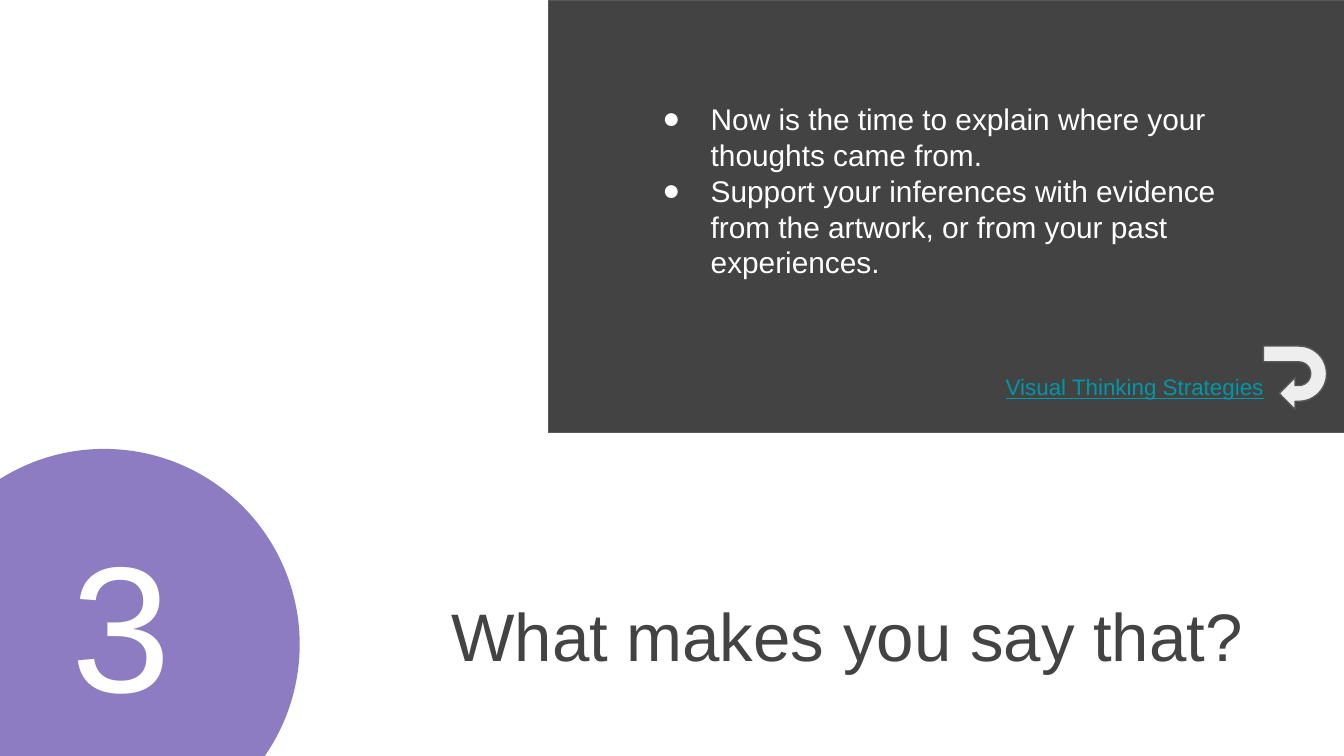
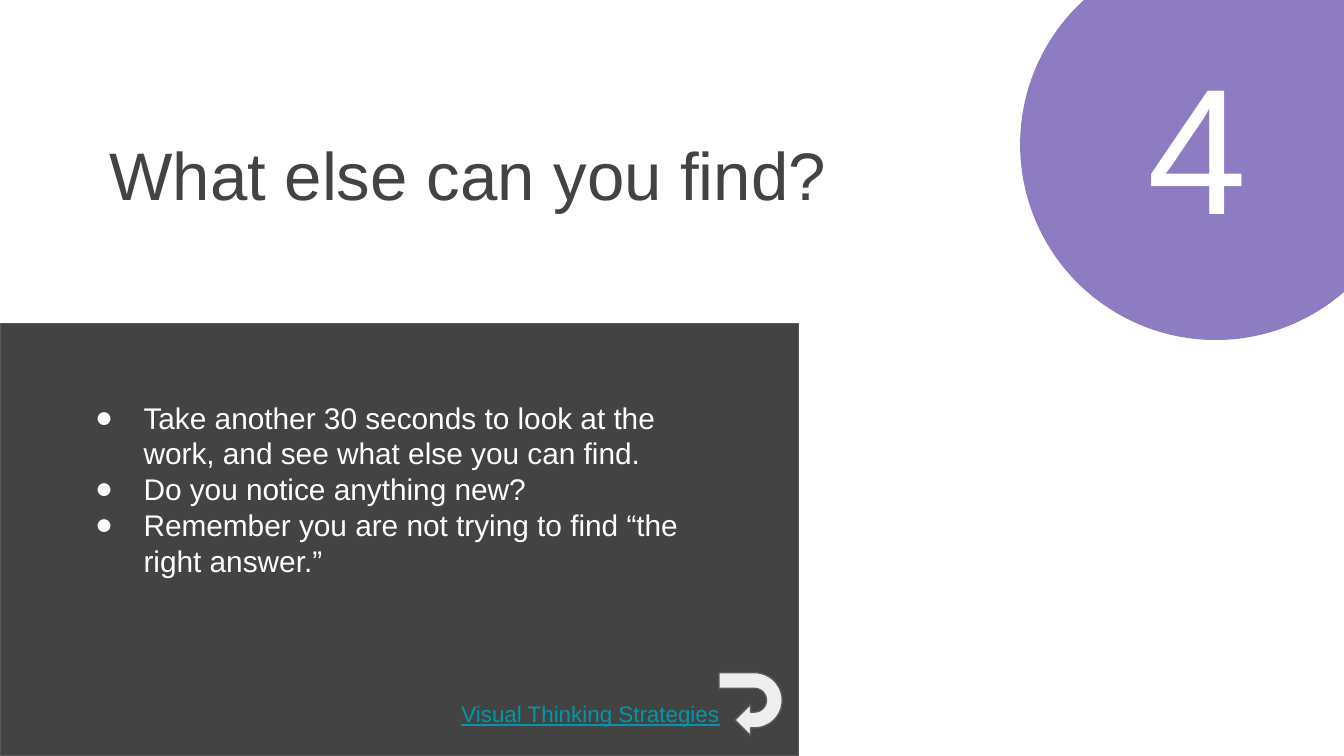
from lxml import etree
from pptx import Presentation
from pptx.dml.color import RGBColor
from pptx.enum.shapes import MSO_SHAPE
from pptx.oxml.ns import qn
from pptx.util import Pt

OVAL = MSO_SHAPE.OVAL
RECTANGLE = MSO_SHAPE.RECTANGLE
U_TURN = MSO_SHAPE.U_TURN_ARROW

PX = 4572  # 200 px to the inch
FONT = "Arial"
COLORS = {
    "purple": "8E7CC3",
    "dark": "434343",
    "outline": "595959",
    "white": "FFFFFF",
    "arrow": "EEEEEE",
    "link": "0097A7",
}

# Positions are (left, top) in px
STEPS = [
    {
        "number": "3",
        "title": "What makes you say that?",
        "bullets": [
            "Now is the time to explain where your thoughts came from.",
            "Support your inferences with evidence from the artwork, "
            "or from your past experiences.",
        ],
        "circle_at": (-136, 668),
        "panel_at": (816, 0),
        "bullets_at": (938, 130),
        "title_at": (652, 865),
        "number_at": (87, 744),
        "link_at": (1477, 536),
    },
    {
        "number": "4",
        "title": "What else can you find?",
        "bullets": [
            "Take another 30 seconds to look at the work, "
            "and see what else you can find.",
            "Do you notice anything new?",
            "Remember you are not trying to find “the right answer.”",
        ],
        "circle_at": (1518, -76),
        "panel_at": (0, 481),
        "bullets_at": (94, 574),
        "title_at": (143, 178),
        "number_at": (1688, 33),
        "link_at": (667, 1022),
    },
]


def rgb(name):
    return RGBColor.from_string(COLORS[name])


def px(*lengths):
    return [length * PX for length in lengths]


class Deck:
    def __init__(self, width, height):
        self.presentation = Presentation()
        self.presentation.slide_width, self.presentation.slide_height = px(width, height)
        self.slide = None

    def new_slide(self):
        self.slide = self.presentation.slides.add_slide(self.presentation.slide_layouts[6])

    def shape(self, kind, position, size, fill, line=None, rotation=0):
        shape = self.slide.shapes.add_shape(kind, *px(*position, *size))
        shape.shadow.inherit = False
        shape.rotation = rotation
        shape.fill.solid()
        shape.fill.fore_color.rgb = rgb(fill)
        if line:
            shape.line.color.rgb = rgb(line)
            shape.line.width = Pt(0.75)
        else:
            shape.line.fill.background()

    def text(self, paragraphs, position, size, points, color="white",
             bullets=False, underline=None):
        box = self.slide.shapes.add_textbox(*px(*position, *size))
        frame = box.text_frame
        frame.word_wrap = True
        frame.margin_left = frame.margin_right = 20 * PX
        frame.margin_top = frame.margin_bottom = 20 * PX
        for index, content in enumerate(paragraphs):
            paragraph = frame.add_paragraph() if index else frame.paragraphs[0]
            if bullets:
                self.bullet(paragraph, points, color)
            run = paragraph.add_run()
            run.text = content
            run.font.name = FONT
            run.font.size = Pt(points)
            run.font.color.rgb = rgb(color)
            run.font.underline = underline

    def bullet(self, paragraph, points, color):
        properties = paragraph._p.get_or_add_pPr()
        properties.set("marL", str(100 * PX))
        properties.set("indent", str(-72 * PX))
        bullet_color = etree.SubElement(properties, qn("a:buClr"))
        etree.SubElement(bullet_color, qn("a:srgbClr"), val=COLORS[color])
        etree.SubElement(properties, qn("a:buSzPts"), val=str(points * 100))
        etree.SubElement(properties, qn("a:buFont"), typeface=FONT)
        etree.SubElement(properties, qn("a:buChar"), char="●")

    def return_link(self, position):
        left, top = position
        self.shape(U_TURN, (left + 403, top - 21), (94, 94), "arrow", "outline", rotation=90)
        self.text(["Visual Thinking Strategies"], position, (480, 76), 12, "link",
                  underline=True)

    def step(self, step):
        self.new_slide()
        # Circle and dark panel
        self.shape(OVAL, step["circle_at"], (582, 582), "purple")
        self.shape(RECTANGLE, step["panel_at"], (1188, 644), "dark", "outline")
        # Instructions, question and step number
        self.text(step["bullets"], step["bullets_at"], (986, 464), 16, bullets=True)
        self.text([step["title"]], step["title_at"], (1436, 174), 36, "dark")
        self.text([step["number"]], step["number_at"], (428, 464), 96)
        # Way back to the overview
        self.return_link(step["link_at"])


def main():
    deck = Deck(2000, 1125)
    for step in STEPS:
        deck.step(step)
    deck.presentation.save("out.pptx")


if __name__ == "__main__":
    main()
